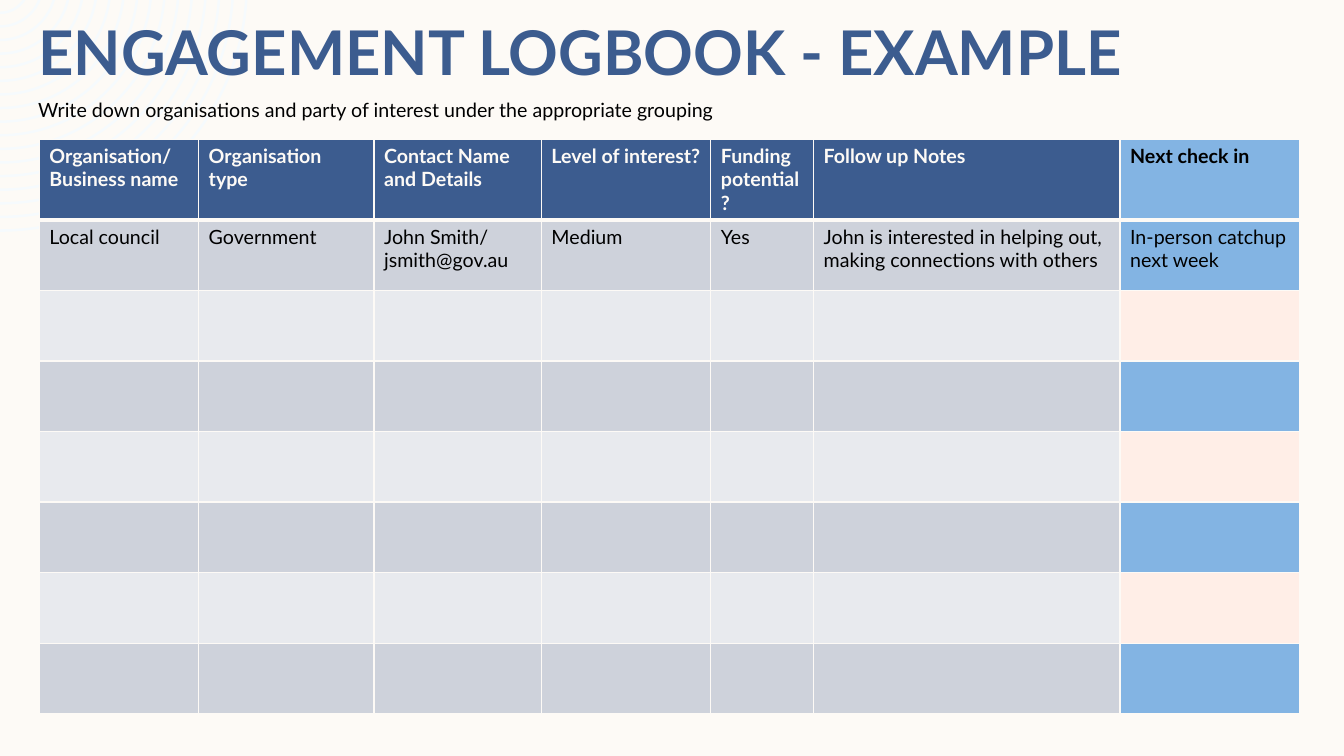
import math

import pptx
import pptx.dml.color
import pptx.enum.text
import pptx.oxml
import pptx.oxml.ns
import pptx.util

Inches, Pt = pptx.util.Inches, pptx.util.Pt

COLORS = {
    "cream": "FDFAF6", "rings": "F6FAFD", "navy": "3C5C8F", "black": "000000",
    "sky": "83B4E3", "grey": "CED2DB", "light": "E8EAEE", "peach": "FFEEE7",
}
COLUMNS = [
    ("Organisation/ Business name", "Local council", 1.58),
    ("Organisation type", "Government", 1.74),
    ("Contact Name and Details", "John Smith/ jsmith@gov.au", 1.66),
    ("Level of interest?", "Medium", 1.68),
    ("Funding potential?", "Yes", 1.02),
    ("Follow up Notes",
     "John is interested in helping out, making connections with others", 3.04),
    ("Next check in", "In-person catchup next week", 1.78),
]
ROW_HEIGHTS = [0.6] + [0.7] * 7


def rgb(name):
    return pptx.dml.color.RGBColor.from_string(COLORS[name])


def arc_points(r, center_y):
    """Return start, two control points and end of the arc from the top edge to the left edge."""
    start = math.asin(-center_y / r)
    k = 4 / 3 * math.tan((math.pi / 2 - start) / 4)
    cos, sin = math.cos(start), math.sin(start)
    unit = [(cos, sin), (cos - k * sin, sin + k * cos), (k, 1), (0, 1)]
    return [(round(1000 * r * x), round(1000 * (center_y + r * y))) for x, y in unit]


def curve_lines(sp):
    """Join the three lines of each arc into one cubic curve."""
    qn = pptx.oxml.ns.qn
    lines = []
    for step in list(sp.element.iter(qn("a:moveTo"), qn("a:lnTo"))):
        if step.tag == qn("a:moveTo"):
            lines = []
            continue
        lines.append(step)
        if len(lines) == 7:
            for first, second, end in (lines[:3], lines[4:]):
                curve = pptx.oxml.parse_xml(
                    f'<a:cubicBezTo {pptx.oxml.ns.nsdecls("a")}/>')
                first.addprevious(curve)
                for line in (first, second, end):
                    curve.append(line[0])
                    line.getparent().remove(line)


class LogbookSlide:
    font = "Lato"

    def __init__(self, prs):
        self.slide = prs.slides.add_slide(prs.slide_layouts[5])
        fill = self.slide.background.fill
        fill.solid()
        fill.fore_color.rgb = rgb("cream")

    def style(self, p, size, color, bold=False):
        p.font.name, p.font.size, p.font.bold = self.font, Pt(size), bold
        p.font.color.rgb = rgb(color)

    def rings(self, count=17, center_y=-0.16, radius=2.46, step=0.135, width=0.025):
        """Draw quarter rings round a point above the top left corner, cut at the slide edge."""
        builder = None
        for i in range(count):
            outer = radius - i * step
            outline = arc_points(outer, center_y) + arc_points(outer - width, center_y)[::-1]
            if builder is None:
                builder = self.slide.shapes.build_freeform(*outline[0], scale=Inches(1) / 1000)
            else:
                builder.move_to(*outline[0])
            builder.add_line_segments(outline[1:], close=True)
        sp = builder.convert_to_shape()
        curve_lines(sp)
        sp.shadow.inherit = False
        sp.fill.solid()
        sp.fill.fore_color.rgb = rgb("rings")
        sp.line.fill.background()
        self.slide.shapes.element.insert(2, sp.element)

    def title(self, text, left, top, width, height):
        sp = self.slide.shapes.title
        sp.left, sp.top, sp.width, sp.height = map(Inches, (left, top, width, height))
        tf = sp.text_frame
        tf.text = text
        tf.vertical_anchor = pptx.enum.text.MSO_ANCHOR.MIDDLE
        p = tf.paragraphs[0]
        p.alignment = pptx.enum.text.PP_ALIGN.LEFT
        self.style(p, 44, "navy", bold=True)

    def text(self, text, left, top, width, height):
        sp = self.slide.shapes.add_textbox(*map(Inches, (left, top, width, height)))
        tf = sp.text_frame
        tf.word_wrap = True
        tf.auto_size = pptx.enum.text.MSO_AUTO_SIZE.SHAPE_TO_FIT_TEXT
        tf.text = text
        self.style(tf.paragraphs[0], 14, "black")

    def borders(self, cell, bottom):
        for side, width in zip("LRTB", (1, 1, 1, bottom)):
            cell._tc.get_or_add_tcPr().append(pptx.oxml.parse_xml(
                f'<a:ln{side} {pptx.oxml.ns.nsdecls("a")} w="{Pt(width)}"><a:solidFill>'
                f'<a:srgbClr val="{COLORS["cream"]}"/></a:solidFill></a:ln{side}>'))

    def cell(self, cell, row, text, last):
        """Format one cell; the last column has its own band colours."""
        if row == 0:
            fill, color = ("sky", "black") if last else ("navy", "cream")
        else:
            bands = ("peach", "sky") if last else ("light", "grey")
            fill, color = bands[row % 2], "black"
        self.borders(cell, 3 if row == 0 else 1)
        cell.fill.solid()
        cell.fill.fore_color.rgb = rgb(fill)
        if text:
            cell.text = text
            self.style(cell.text_frame.paragraphs[0], 14, color, bold=row == 0)

    def table(self, left, top):
        widths = [width for _, _, width in COLUMNS]
        table = self.slide.shapes.add_table(
            len(ROW_HEIGHTS), len(COLUMNS), Inches(left), Inches(top),
            Inches(sum(widths)), Inches(sum(ROW_HEIGHTS))).table
        for row, height in zip(table.rows, ROW_HEIGHTS):
            row.height = Inches(height)
        for c, (heading, example, width) in enumerate(COLUMNS):
            table.columns[c].width = Inches(width)
            for r in range(len(ROW_HEIGHTS)):
                text = (heading, example)[r] if r < 2 else ""
                self.cell(table.cell(r, c), r, text, c == len(COLUMNS) - 1)


def main():
    prs = pptx.Presentation()
    prs.slide_width, prs.slide_height = Inches(13.33), Inches(7.5)
    s = LogbookSlide(prs)
    s.rings()
    s.title("ENGAGEMENT LOGBOOK - EXAMPLE", 0.28, 0.08, 11.67, 0.84)
    s.text("Write down organisations and party of interest under the appropriate grouping",
           0.28, 0.92, 10.08, 0.34)
    s.table(0.39, 1.38)
    prs.save("out.pptx")


if __name__ == "__main__":
    main()
